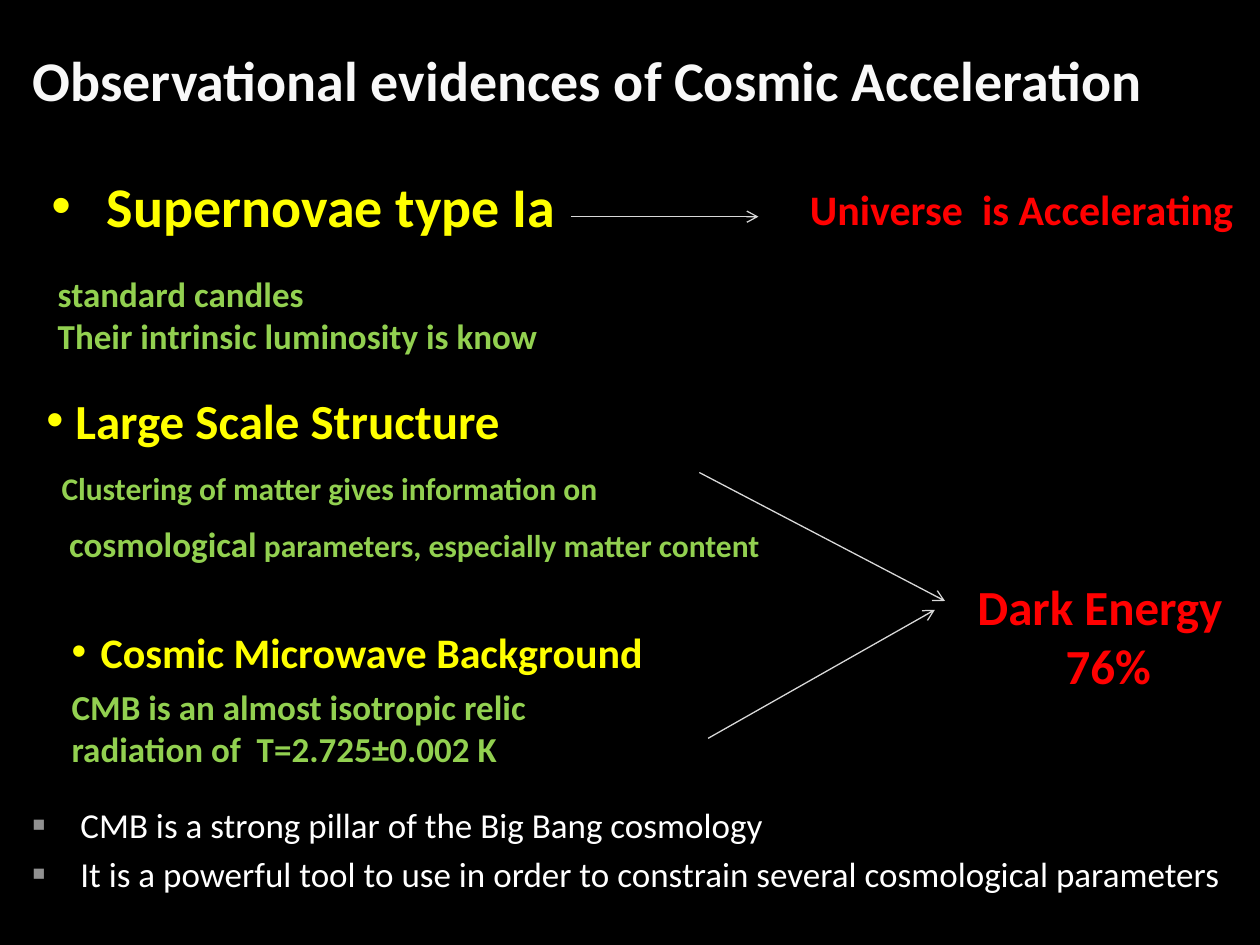
from pptx import Presentation
from pptx.dml.color import RGBColor
from pptx.enum import shapes
from pptx.oxml import parse_xml
from pptx.oxml.ns import nsdecls
from pptx.util import Inches, Pt

BLACK = RGBColor(0x00, 0x00, 0x00)
WHITE = RGBColor(0xFF, 0xFF, 0xFF)
TITLE = RGBColor(0xF8, 0xF8, 0xF8)
YELLOW = RGBColor(0xFF, 0xFF, 0x00)
GREEN = RGBColor(0x92, 0xD0, 0x50)
RED = RGBColor(0xFF, 0x00, 0x00)
GREY = RGBColor(0xD8, 0xD8, 0xD8)
BULLET_GREY = RGBColor(0x91, 0x91, 0x91)


def add_text(box, lines, size, color, bold=True, wrap=True, before=0):
    """Add a text box with one paragraph per line."""
    tf = s.shapes.add_textbox(*map(Inches, box)).text_frame
    tf.word_wrap = wrap
    for i, line in enumerate(lines):
        p = tf.paragraphs[0] if i == 0 else tf.add_paragraph()
        p.text = line
        if i:
            p.space_before = Pt(before)
        for r in p.runs:
            r.font.name, r.font.size, r.font.bold = "Calibri", Pt(size), bold
            r.font.color.rgb = color
    return tf


def indent(p, left, char=None, first=0, color=None, percent=100):
    """Indent a paragraph and give it a bullet if there is a character."""
    pPr = p._p.get_or_add_pPr()
    pPr.set("marL", str(Inches(left)))
    pPr.set("indent", str(Inches(first)))
    if color:
        pPr.append(parse_xml(f'<a:buClr {nsdecls("a")}><a:srgbClr val="{color}"/></a:buClr>'))
    if char:
        pPr.append(parse_xml(f'<a:buSzPct {nsdecls("a")} val="{percent * 1000}"/>'))
        pPr.append(parse_xml(f'<a:buFont {nsdecls("a")} typeface="Arial"/>'))
        pPr.append(parse_xml(f'<a:buChar {nsdecls("a")} char="{char}"/>'))


prs = Presentation()
prs.slide_width, prs.slide_height = Inches(10), Inches(7.5)
s = prs.slides.add_slide(prs.slide_layouts[6])
s.background.fill.solid()
s.background.fill.fore_color.rgb = BLACK

# Title
add_text((0.16, 0.31, 9.61, 0.64), ["Observational evidences of Cosmic Acceleration"], 32, TITLE)

# Bulleted headings: box, text, size, left margin, hanging indent
headings = [
    ((0.31, 1.31, 4.38, 0.64), "Supernovae type Ia", 32, 0.44, 0.44),
    ((0, 3.05, 4.45, 0.57), "Large Scale Structure", 28, 0.5, 0.23),
    ((0.47, 4.92, 6.33, 0.5), "Cosmic Microwave Background", 24, 0.23, 0.23),
]
for box, label, size, left, hang in headings:
    tf = add_text(box, [label], size, YELLOW)
    indent(tf.paragraphs[0], left, "•", -hang)

# Explanations under the headings
add_text((0.36, 2.11, 4.1, 0.77), ["standard candles", "Their intrinsic luminosity is know"],
         20, GREEN, wrap=False)
add_text((0.47, 5.39, 4.84, 0.77),
         ["CMB is an almost isotropic relic radiation of  T=2.725±0.002 K"], 20, GREEN)
tf = add_text((0.39, 3.67, 6.8, 0.9), ["Clustering of matter gives information on", "cosmological"],
              18, GREEN, before=9)
p = tf.paragraphs[1]
indent(p, 0.06)
p.runs[0].font.size = Pt(20)
r = p.add_run()
r.text = " parameters, especially matter content"
r.font.name, r.font.size, r.font.bold = "Calibri", Pt(18), True
r.font.color.rgb = GREEN

# Conclusions
add_text((6.33, 1.41, 3.6, 0.51), ["Universe  is Accelerating"], 24, RED, wrap=False)
tf = add_text((7.66, 4.53, 2.17, 1.04), ["Dark Energy", "76%"], 28, RED, wrap=False)
indent(tf.paragraphs[1], 0.7)

# Closing remarks
tf = add_text((0.16, 6.33, 9.71, 0.84),
              ["CMB is a strong pillar of the Big Bang cosmology",
               "It is a powerful tool to use in order to constrain several cosmological parameters"],
              20, WHITE, bold=False, wrap=False, before=4)
for p in tf.paragraphs:
    indent(p, 0.38, "■", -0.38, BULLET_GREY, 60)

# Arrows from evidence to conclusion
for ends in [(4.53, 1.72, 6.02, 1.72), (5.55, 3.75, 7.5, 4.77), (5.62, 5.86, 7.42, 4.84)]:
    sp = s.shapes.add_connector(shapes.MSO_CONNECTOR.STRAIGHT, *map(Inches, ends))
    sp.line.color.rgb = GREY
    sp.line.width = Pt(0.75)
    sp.line._get_or_add_ln().append(parse_xml(f'<a:tailEnd {nsdecls("a")} type="arrow"/>'))
    sp._element.spPr.append(parse_xml(f'<a:effectLst {nsdecls("a")}/>'))

prs.save("out.pptx")
